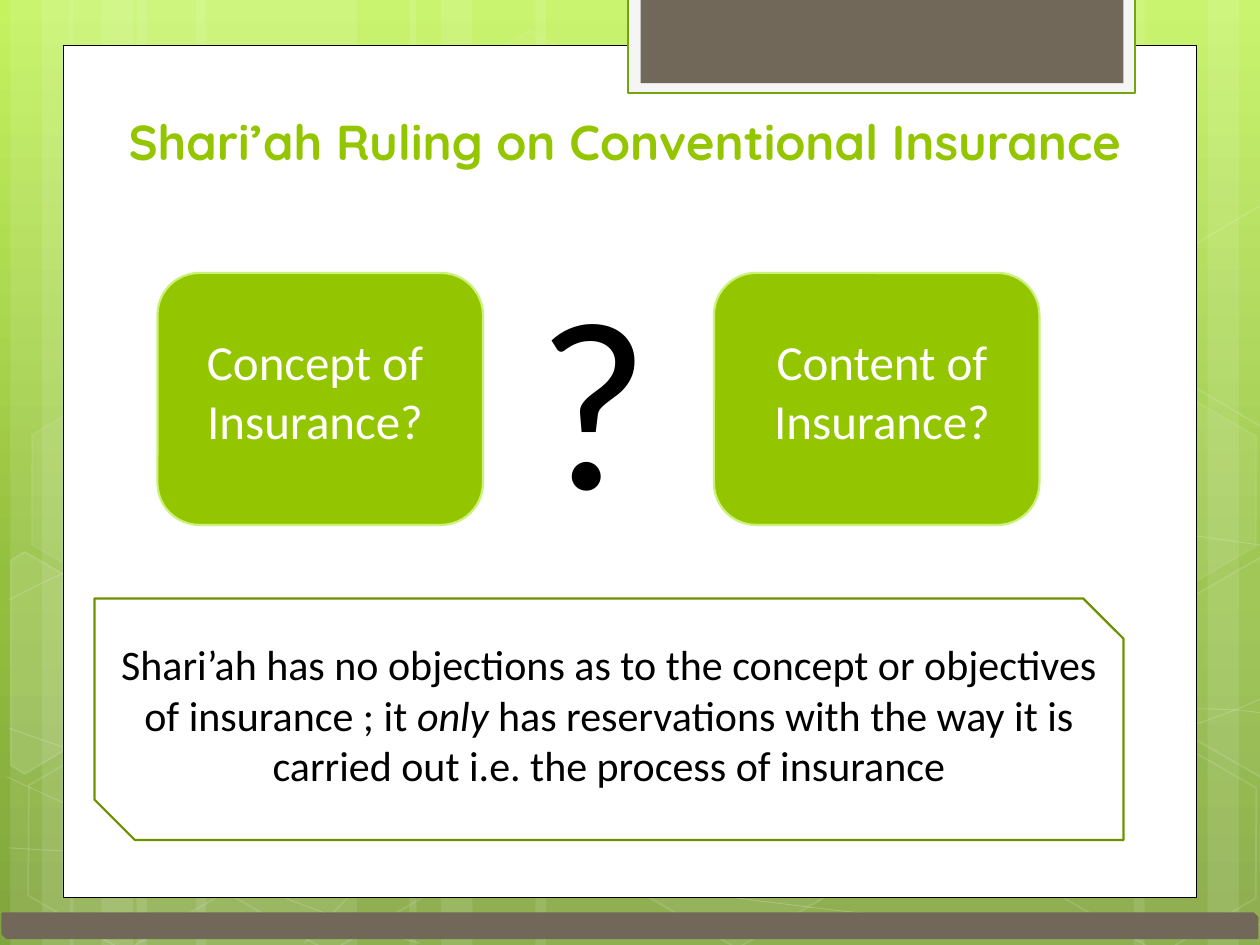
"""Build the slide on the Shari’ah ruling on conventional insurance."""
from math import cos, radians, sin

from lxml.etree import SubElement
from pptx import Presentation
from pptx.dml.color import RGBColor
from pptx.enum.shapes import MSO_SHAPE as Preset
from pptx.enum.text import PP_ALIGN as Align
from pptx.oxml.ns import qn
from pptx.util import Pt

WHITE = RGBColor(0xFF, 0xFF, 0xFF)
BLACK = RGBColor(0x00, 0x00, 0x00)
GREEN = RGBColor(0x94, 0xC6, 0x00)
PALE_GREEN = RGBColor(0xCA, 0xF2, 0x78)
DARK_GREEN = RGBColor(0x6D, 0x92, 0x00)
TAB_GREEN = RGBColor(0x74, 0xA5, 0x10)
LIGHT_GREY = RGBColor(0xF5, 0xF5, 0xF5)
BROWN = RGBColor(0x71, 0x68, 0x5A)

WIDTH, HEIGHT = 720, 540
TILT = 30
BACKDROP = [(0, "C3F35F"), (62, "93BF3F"), (100, "81A53E")]

STRIPES = [(78, 126, 0), (6, 36, 0), (24, 60, 0), (112, 126, 0), (40, 36, 0), (58, 60, 0),
           (528, 126, 180), (690, 36, 180), (648, 60, 180),
           (306, 222, 0), (234, 36, 0), (252, 60, 0)]

CURVES = [
    [(5, 484.5), (44, 487, 83, 489, 137, 488), (191, 487, 258, 486, 330, 479),
     (402, 472, 504, 458, 570, 444), (636, 431, 703, 409, 725, 397)],
    [(5, 343), (26, 332, 47, 321, 87, 310), (128, 300, 186, 284, 250, 279),
     (314, 274, 392, 273, 471, 279), (550, 284, 682, 307, 725, 312)],
    [(4, 444), (91, 484, 178, 523, 240, 539)],
    [(5, 416), (27, 424, 50, 432, 92, 444), (134, 454, 197, 472, 257, 485),
     (317, 497, 392, 510, 452, 517), (512, 525, 576, 528, 614, 530),
     (652, 533, 662, 531, 680, 531), (699, 531, 712, 529, 725, 528)],
    [(174, 539), (187, 525, 200, 510, 217, 498), (235, 485, 259, 470, 279, 460),
     (300, 450, 312, 446, 338, 438), (364, 431, 413, 421, 438, 416),
     (464, 411, 467, 411, 490, 410), (512, 408, 547, 405, 572, 405),
     (597, 404, 638, 405, 638, 405), (686, 405),
     (699, 405, 711, 406, 718, 407), (724, 408, 722, 407, 724, 408)],
]

HEXAGONS = [(240, 26, 4, 8), (358, 424, 6, 12), (8, 425.5, 0, 12), (10, 225, 7, 8),
            (125, 426, 0, 12), (542, 326, 10, 12), (600, 427, 0, 12), (600, 226, 7, 8)]
CUT_HEXAGONS = [
    ((26, 385), 10, [(6, 320), (14, 315), (69, 347), (68, 410), (14, 442), (6, 437)]),
    ((709, 374.5), 4,
     [(667, 349), (721, 318), (726, 321), (726, 441), (721, 444), (667, 413)]),
    ((709, 173.5), 0,
     [(667, 149), (721, 117), (727, 121), (726, 241), (721, 244), (667, 212)]),
]

TITLE = [("Shari’ah Ruling on Conventional Insurance", False)]
QUESTIONS = [(90, 96, "Concept of Insurance?"), (408, 420, "Content of Insurance?")]
RULING = [
    ("Shari’ah has no objections as to the concept or objectives of insurance ; it ", False),
    ("only", True),
    (" has reservations with the way it is carried out i.e. the process of insurance", False),
]


def paint(shape, fill=None, line=None, weight=1.25, fill_alpha=100, line_alpha=100):
    shape.shadow.inherit = False
    for target, color, alpha in ((shape.fill, fill, fill_alpha),
                                 (shape.line.fill, line, line_alpha)):
        if color is None or alpha == 0:
            target.background()
            continue
        target.solid()
        target.fore_color.rgb = color
        if alpha < 100:
            parent = shape.element.spPr
            if target is not shape.fill:
                parent = parent.find(qn("a:ln"))
            tint = parent.find(qn("a:solidFill")).find(qn("a:srgbClr"))
            SubElement(tint, qn("a:alpha"), val=str(alpha * 1000))
    if line is not None:
        shape.line.width = Pt(weight)


def add_preset(page, kind, frame, **style):
    shape = page.shapes.add_shape(kind, *map(Pt, frame))
    paint(shape, **style)
    return shape


def add_outline(page, points, close):
    (start_x, start_y), *rest = [(Pt(x), Pt(y)) for x, y in points]
    builder = page.shapes.build_freeform(start_x, start_y)
    builder.add_line_segments(rest, close=close)
    return builder.convert_to_shape()


def add_curve(page, curve):
    shape = add_outline(page, [step[-2:] for step in curve], False)
    for segment, step in zip(list(shape.element.iter(qn("a:lnTo"))), curve[1:]):
        if len(step) == 2:
            continue
        segment.tag = qn("a:cubicBezTo")
        bend = SubElement(segment.getparent(), qn("a:cubicBezTo"))
        for x, y in zip(step[::2], step[1::2]):
            SubElement(bend, qn("a:pt"), x=str(Pt(x) - shape.left), y=str(Pt(y) - shape.top))
        segment.getparent().replace(segment, bend)
    paint(shape, line=WHITE, weight=0.5, line_alpha=20)


def turn_back(point, center):
    across, down = point[0] - center[0], point[1] - center[1]
    cosine, sine = cos(radians(TILT)), sin(radians(TILT))
    return (center[0] + across * cosine + down * sine,
            center[1] - across * sine + down * cosine)


def add_text(page, frame, spans, size, color, font="Calibri", bold=False, align=Align.CENTER):
    box = page.shapes.add_textbox(*map(Pt, frame))
    box.text_frame.word_wrap = True
    para = box.text_frame.paragraphs[0]
    para.alignment = align
    para.font.name, para.font.size, para.font.bold = font, Pt(size), bold
    para.font.color.rgb = color
    for text, italic in spans:
        span = para.add_run()
        span.text = text
        if italic:
            span.font.italic = True


def add_backdrop(page):
    fill = page.background.fill
    fill.gradient()
    fill.gradient_angle = 270
    stops = next(page.element.iter(qn("a:gsLst")))
    for stop in list(stops):
        stops.remove(stop)
    for place, color in BACKDROP:
        stop = SubElement(stops, qn("a:gs"), pos=str(place * 1000))
        SubElement(stop, qn("a:srgbClr"), val=color)

    for left, width, turn in STRIPES:
        stripe = add_preset(page, Preset.RECTANGLE, (left, 0, width, HEIGHT),
                            fill=WHITE, fill_alpha=10)
        stripe.rotation = turn
    for curve in CURVES:
        add_curve(page, curve)
    for left, top, fill_alpha, line_alpha in HEXAGONS:
        hexagon = add_preset(page, Preset.HEXAGON, (left, top, 126, 109.5), fill=WHITE,
                             line=WHITE, weight=1, fill_alpha=fill_alpha, line_alpha=line_alpha)
        hexagon.adjustments[0] = 0.285
        hexagon.rotation = TILT
    for center, fill_alpha, points in CUT_HEXAGONS:
        piece = add_outline(page, [turn_back(point, center) for point in points], True)
        piece.rotation = TILT
        paint(piece, fill=WHITE, line=WHITE, weight=1, fill_alpha=fill_alpha, line_alpha=12)

    add_preset(page, Preset.RECTANGLE, (36, 26, 648, 487), fill=WHITE, line=BLACK, weight=0.5)
    add_preset(page, Preset.RECTANGLE, (359, -1.5, 289.5, 54.5), fill=LIGHT_GREY, line=TAB_GREEN)
    add_preset(page, Preset.RECTANGLE, (366, -1.5, 276, 49), fill=BROWN)


def main():
    deck = Presentation()
    deck.slide_width, deck.slide_height = Pt(WIDTH), Pt(HEIGHT)
    page = deck.slides.add_slide(deck.slide_layouts[6])
    add_backdrop(page)
    add_text(page, (48, 60, 618, 60), TITLE, 28, GREEN, font="Quicksand", bold=True)
    for card_left, text_left, question in QUESTIONS:
        add_preset(page, Preset.ROUNDED_RECTANGLE, (card_left, 156, 186, 144),
                   fill=GREEN, line=PALE_GREEN)
        add_text(page, (text_left, 186, 168, 75), [(question, False)], 28, WHITE)
    add_text(page, (300, 138, 90, 174), [("?", False)], 138, BLACK, align=Align.LEFT)
    add_preset(page, Preset.SNIP_2_DIAG_RECTANGLE, (54, 342, 588, 138), line=DARK_GREEN)
    add_text(page, (60, 361.5, 576, 94.5), RULING, 24, BLACK)
    add_preset(page, Preset.SNIP_2_DIAG_RECTANGLE, (1.5, 522, 717, 14), fill=BROWN, line=BROWN)
    deck.save("out.pptx")


if __name__ == "__main__":
    main()
